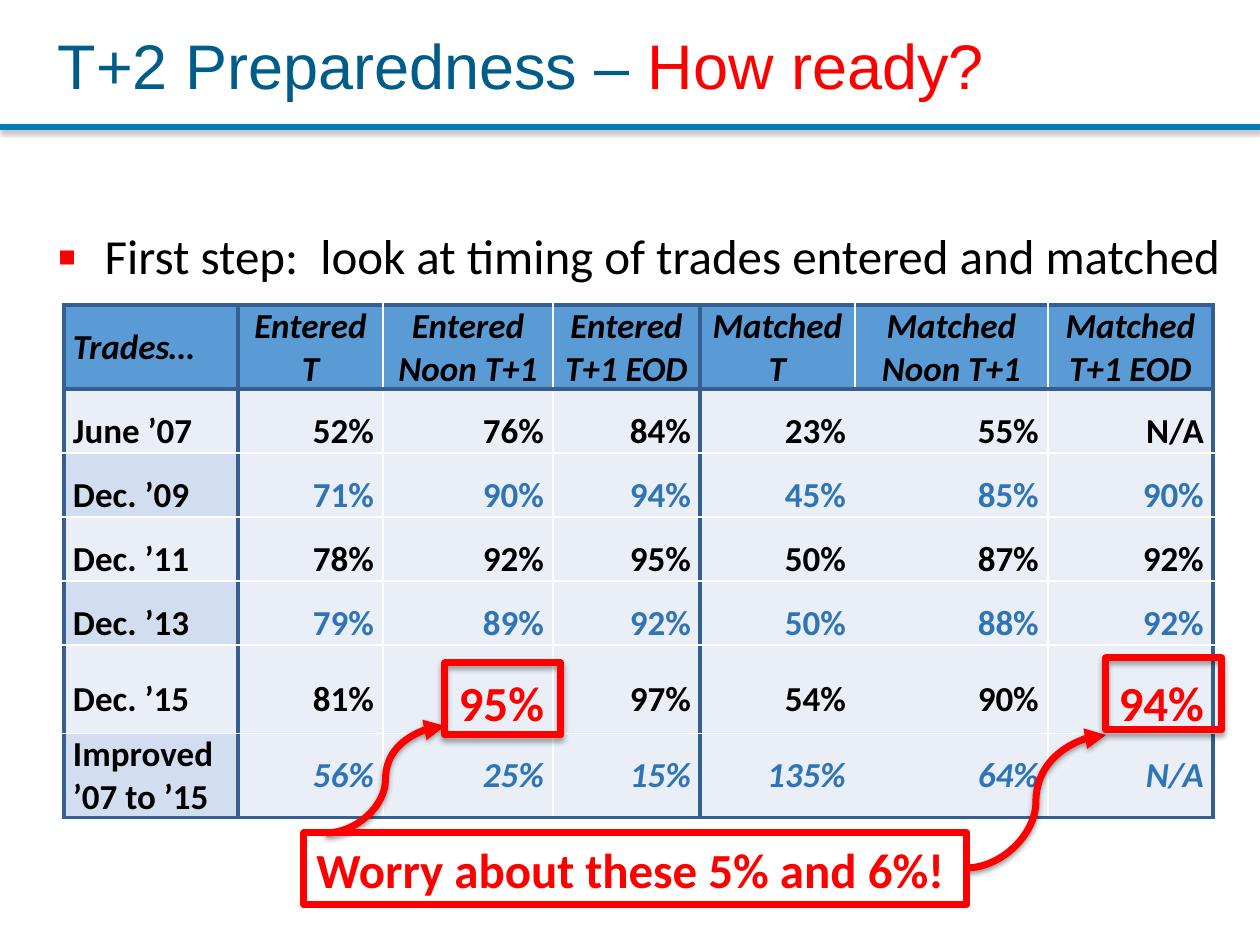
"""Build the T+2 preparedness slide with its timing table and callouts."""
from typing import NamedTuple

from lxml import etree
from pptx import Presentation
from pptx.dml.color import RGBColor
from pptx.enum.shapes import MSO_CONNECTOR, MSO_SHAPE
from pptx.enum.text import MSO_ANCHOR, MSO_AUTO_SIZE, PP_ALIGN
from pptx.oxml.ns import qn
from pptx.util import Emu, Pt

LEFT, MID, RIGHT = PP_ALIGN.LEFT, PP_ALIGN.CENTER, PP_ALIGN.RIGHT
CENTER, BOTTOM = MSO_ANCHOR.MIDDLE, MSO_ANCHOR.BOTTOM
FIT, FIXED = MSO_AUTO_SIZE.SHAPE_TO_FIT_TEXT, MSO_AUTO_SIZE.NONE
RECT, ROUND = MSO_SHAPE.RECTANGLE, MSO_SHAPE.ROUNDED_RECTANGLE
LINE, CURVE = MSO_CONNECTOR.STRAIGHT, MSO_CONNECTOR.CURVE
SCALE = 914400 / 126
HUES = {
    "title": "005D89", "rule": "007CB7", "red": "FF0000", "black": "000000",
    "white": "FFFFFF", "edge": "365F91", "head": "5B9BD5", "pale": "EAEFF7",
    "band": "D2DEEF", "blue": "2F75B5",
}
COLS = (174, 145, 170, 147, 155, 193, 165)
ROW = 64
HEADS = ("Trades…", "Entered T", "Entered\nNoon T+1", "Entered T+1 EOD",
         "Matched T", "Matched Noon T+1", "Matched T+1 EOD")
TRADES = (
    ("June ’07", "52%", "76%", "84%", "23%", "55%", "N/A"),
    ("Dec. ’09", "71%", "90%", "94%", "45%", "85%", "90%"),
    ("Dec. ’11", "78%", "92%", "95%", "50%", "87%", "92%"),
    ("Dec. ’13", "79%", "89%", "92%", "50%", "88%", "92%"),
    ("Dec. ’15", "81%", "95%", "97%", "54%", "90%", "94%"),
    ("Improved ’07 to ’15", "56%", "25%", "15%", "135%", "64%", "N/A"),
)
GRID = (HEADS,) + TRADES
LAST = len(TRADES)
ALERTS = {(5, 2), (5, 6)}
THICK_X, THICK_Y = {0, 1, 4, 7}, {0, 1, 7}


class Box(NamedTuple):
    x: int
    y: int
    w: int
    h: int


class Link(NamedTuple):
    x1: int
    y1: int
    x2: int
    y2: int


MARKS = (Box(1106, 658, 116, 72), Box(445, 663, 116, 72))
LINKS = (Link(966, 868, 1106, 735), Link(326, 833, 445, 726))
RULE = Link(0, 127, 1260, 127)


def px(n: int) -> Emu:
    return Emu(round(n * SCALE))


def rgb(hue: str) -> RGBColor:
    return RGBColor.from_string(HUES[hue])


def sub(top, tag: str, **attrs):
    return etree.SubElement(top, qn("a:" + tag), attrs)


def put(para, text: str, *, size: int, hue: str, face: str = "Calibri",
        bold: bool = False, italic: bool = False, align=LEFT,
        space: float = 1.0) -> None:
    para.alignment = align
    para.line_spacing = space
    run = para.add_run()
    run.text = text
    font = run.font
    font.name, font.size = face, Pt(size)
    font.bold, font.italic = bold, italic
    font.color.rgb = rgb(hue)


def place(shape, box: Box) -> None:
    shape.left, shape.top, shape.width, shape.height = map(px, box)


def shade(shape, alpha: int, dist: int) -> None:
    top = sub(shape._element.spPr, "effectLst")
    cast = sub(top, "outerShdw", blurRad="40000", dist=str(dist),
               dir="5400000", rotWithShape="0")
    sub(sub(cast, "srgbClr", val=HUES["black"]), "alpha", val=str(alpha * 1000))


def draw_link(slide, link: Link, kind, hue: str, width: int, arrow: bool) -> None:
    wire = slide.shapes.add_connector(kind, *map(px, link))
    wire.line.color.rgb = rgb(hue)
    wire.line.width = Pt(width)
    if arrow:
        sub(wire.line._get_or_add_ln(), "tailEnd", type="triangle")
    shade(wire, 38, 20000)


def draw_frame(slide, box: Box, kind):
    shape = slide.shapes.add_shape(kind, *map(px, box))
    shape.fill.background()
    shape.line.color.rgb = rgb("red")
    shape.line.width = Pt(4)
    return shape


def draw_mark(slide, box: Box) -> None:
    shape = draw_frame(slide, box, ROUND)
    shape.adjustments[0] = 0
    shade(shape, 35, 23000)


def draw_note(slide, box: Box, text: str) -> None:
    shape = draw_frame(slide, box, RECT)
    shape.shadow.inherit = False
    frame = shape.text_frame
    frame.word_wrap, frame.auto_size = True, FIT
    put(frame.paragraphs[0], text, size=28, hue="red", bold=True)


def fill_title(shape) -> None:
    place(shape, Box(45, 19, 1215, 89))
    shape.fill.solid()
    shape.fill.fore_color.rgb = rgb("white")
    frame = shape.text_frame
    frame.auto_size, frame.vertical_anchor = FIXED, BOTTOM
    para = frame.paragraphs[0]
    put(para, "T+2 Preparedness – ", size=36, hue="title", face="Arial")
    put(para, "How ready?", size=36, hue="red", face="Arial")


def fill_body(shape) -> None:
    place(shape, Box(45, 226, 1198, 67))
    frame = shape.text_frame
    frame.auto_size = FIT
    para = frame.paragraphs[0]
    props = para._p.get_or_add_pPr()
    props.set("marL", str(px(47)))
    props.set("indent", str(-px(47)))
    sub(sub(props, "buClr"), "srgbClr", val=HUES["red"])
    sub(props, "buSzPct", val="115000")
    sub(props, "buFont", typeface="Arial")
    sub(props, "buChar", char="▪")
    para.space_before = Pt(0)
    put(para, "First step:  look at timing of trades entered and matched",
        size=28, hue="black", space=0.9)


def set_edges(cell, row: int, col: int) -> None:
    props = cell._tc.get_or_add_tcPr()
    sides = (("lnL", col, THICK_X), ("lnR", col + 1, THICK_X),
             ("lnT", row, THICK_Y), ("lnB", row + 1, THICK_Y))
    for i, (tag, at, thick) in enumerate(sides):
        bold = at in thick
        edge = etree.Element(qn("a:" + tag), w=str(Pt(2.25 if bold else 1)))
        if row and at == 5 and thick is THICK_X:
            sub(edge, "noFill")
        else:
            hue = "edge" if bold else "white"
            sub(sub(edge, "solidFill"), "srgbClr", val=HUES[hue])
        props.insert(i, edge)


def fill_cell(cell, row: int, col: int, text: str) -> None:
    even = row % 2 == 0
    alert = (row, col) in ALERTS
    fill = "head" if row == 0 else "band" if col == 0 and even else "pale"
    hue = "red" if alert else "blue" if row and col and even else "black"
    cell.fill.solid()
    cell.fill.fore_color.rgb = rgb(fill)
    cell.vertical_anchor = CENTER
    cell.margin_left = cell.margin_right = px(9)
    cell.margin_top = cell.margin_bottom = 0
    frame = cell.text_frame
    for i, part in enumerate(text.split("\n")):
        para = frame.add_paragraph() if i else frame.paragraphs[0]
        put(para, part, size=28 if alert else 20, hue=hue, bold=True,
            italic=row == 0 or (row == LAST and col > 0),
            align=LEFT if col == 0 else RIGHT if row else MID,
            space=1.5 if 0 < row < LAST else 1.0)
    set_edges(cell, row, col)


def draw_table(slide, box: Box) -> None:
    shape = slide.shapes.add_table(len(GRID), len(COLS), *map(px, box))
    table = shape.table
    table.first_row = table.horz_banding = False
    for col, width in zip(table.columns, COLS):
        col.width = px(width)
    for row in table.rows:
        row.height = px(ROW)
    place(shape, box)
    for r, texts in enumerate(GRID):
        for c, text in enumerate(texts):
            fill_cell(table.cell(r, c), r, c, text)


def main() -> None:
    deck = Presentation()
    deck.slide_width, deck.slide_height = px(1260), px(945)
    slide = deck.slides.add_slide(deck.slide_layouts[1])
    fill_title(slide.shapes.title)
    fill_body(slide.placeholders[1])
    draw_link(slide, RULE, LINE, "rule", 3, False)
    draw_table(slide, Box(64, 305, sum(COLS), 512))
    for link in LINKS:
        draw_link(slide, link, CURVE, "red", 4, True)
    for mark in MARKS:
        draw_mark(slide, mark)
    draw_note(slide, Box(304, 833, 663, 72), "Worry about these 5% and 6%!")
    deck.save("out.pptx")


if __name__ == "__main__":
    main()
